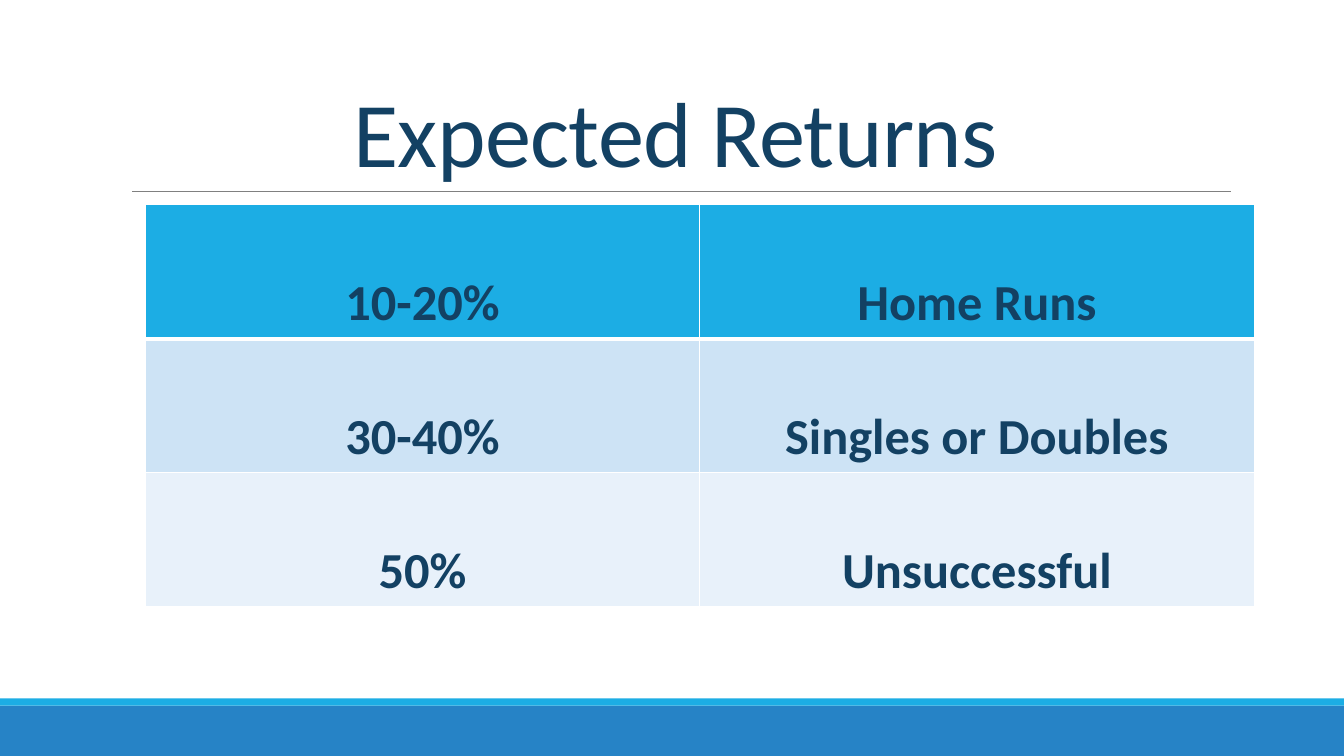
import pptx
import pptx.dml.color
import pptx.enum.shapes
import pptx.enum.text
import pptx.oxml
import pptx.oxml.ns
import pptx.util

Inches = pptx.util.Inches
RGBColor = pptx.dml.color.RGBColor
NAVY = RGBColor(0x13, 0x41, 0x63)
BLUE = RGBColor(0x26, 0x83, 0xC6)
CYAN = RGBColor(0x1C, 0xAD, 0xE4)
GRAY = RGBColor(0x80, 0x80, 0x80)
WHITE = RGBColor(0xFF, 0xFF, 0xFF)
ROW_FILLS = [CYAN, RGBColor(0xCD, 0xE3, 0xF5), RGBColor(0xE8, 0xF1, 0xFA)]
RETURNS = [
    ("10-20%", "Home Runs"),
    ("30-40%", "Singles or Doubles"),
    ("50%", "Unsuccessful"),
]


def write_text(frame, text, size, bold=False, line_spacing=None, tracking=None):
    """Write one centred, bottom-anchored paragraph into a text frame."""
    frame.vertical_anchor = pptx.enum.text.MSO_ANCHOR.BOTTOM
    para = frame.paragraphs[0]
    para.alignment = pptx.enum.text.PP_ALIGN.CENTER
    para.line_spacing = line_spacing
    span = para.add_run()
    span.text = text
    span.font.name = "Calibri"
    span.font.size = pptx.util.Pt(size)
    span.font.bold = bold
    span.font.color.rgb = NAVY
    if tracking is not None:
        span._r.get_or_add_rPr().set("spc", str(round(tracking * 100)))


def add_bar(page, left, top, width, height, color):
    """Add a plain filled bar."""
    bar = page.shapes.add_shape(
        pptx.enum.shapes.MSO_SHAPE.RECTANGLE,
        Inches(left), Inches(top), Inches(width), Inches(height))
    bar.shadow.inherit = False
    bar.fill.solid()
    bar.fill.fore_color.rgb = color
    bar.line.fill.background()


def add_footer(page, left, top, width, height):
    """Add the footer band with its thin accent strip on top."""
    strip = 0.07
    add_bar(page, left, top + strip, width, height - strip, BLUE)
    add_bar(page, left, top, width, strip, CYAN)


def add_title(page, left, top, width, height):
    """Place the title and the rule under it."""
    title = page.shapes.title
    title.left, title.top = Inches(left), Inches(top)
    title.width, title.height = Inches(width), Inches(height)
    title.text_frame.word_wrap = True
    write_text(title.text_frame, "Expected Returns", 66, line_spacing=0.85, tracking=-0.5)
    bottom = Inches(top + height)
    rule = page.shapes.add_connector(
        pptx.enum.shapes.MSO_CONNECTOR.STRAIGHT,
        Inches(left + 0.11), bottom, Inches(left + width + 0.01), bottom)
    rule.line.color.rgb = GRAY
    rule.line.width = pptx.util.Pt(0.5)
    rule._element.spPr.append(pptx.oxml.parse_xml(
        f"<a:effectLst {pptx.oxml.ns.nsdecls('a')}/>"))


def set_borders(cell, top, bottom):
    """Draw white cell borders with the given top and bottom widths in points."""
    properties = cell._tc.get_or_add_tcPr()
    for side, points in (("L", 1), ("R", 1), ("T", top), ("B", bottom)):
        properties.append(pptx.oxml.parse_xml(
            f"<a:ln{side} {pptx.oxml.ns.nsdecls('a')} w='{pptx.util.Pt(points)}'>"
            f"<a:solidFill><a:srgbClr val='{WHITE}'/></a:solidFill></a:ln{side}>"))


def add_returns_table(page, left, top, width, height):
    """Add the table of shares and outcomes."""
    table = page.shapes.add_table(
        len(RETURNS), len(RETURNS[0]),
        Inches(left), Inches(top), Inches(width), Inches(height)).table
    for row, (texts, color) in enumerate(zip(RETURNS, ROW_FILLS)):
        for column, text in enumerate(texts):
            cell = table.cell(row, column)
            set_borders(cell, top=3 if row == 1 else 1, bottom=3 if row == 0 else 1)
            cell.fill.solid()
            cell.fill.fore_color.rgb = color
            write_text(cell.text_frame, text, 36, bold=True)
            cell.vertical_anchor = pptx.enum.text.MSO_ANCHOR.BOTTOM


def main():
    """Build and save the deck."""
    deck = pptx.Presentation()
    deck.slide_width, deck.slide_height = Inches(13.33), Inches(7.5)
    page = deck.slides.add_slide(deck.slide_layouts.get_by_name("Title Only"))
    add_footer(page, 0, 6.93, 13.33, 0.57)
    add_title(page, 1.2, 0.31, 11, 1.59)
    add_returns_table(page, 1.44, 2.03, 11, 3.99)
    deck.save("out.pptx")


if __name__ == "__main__":
    main()
